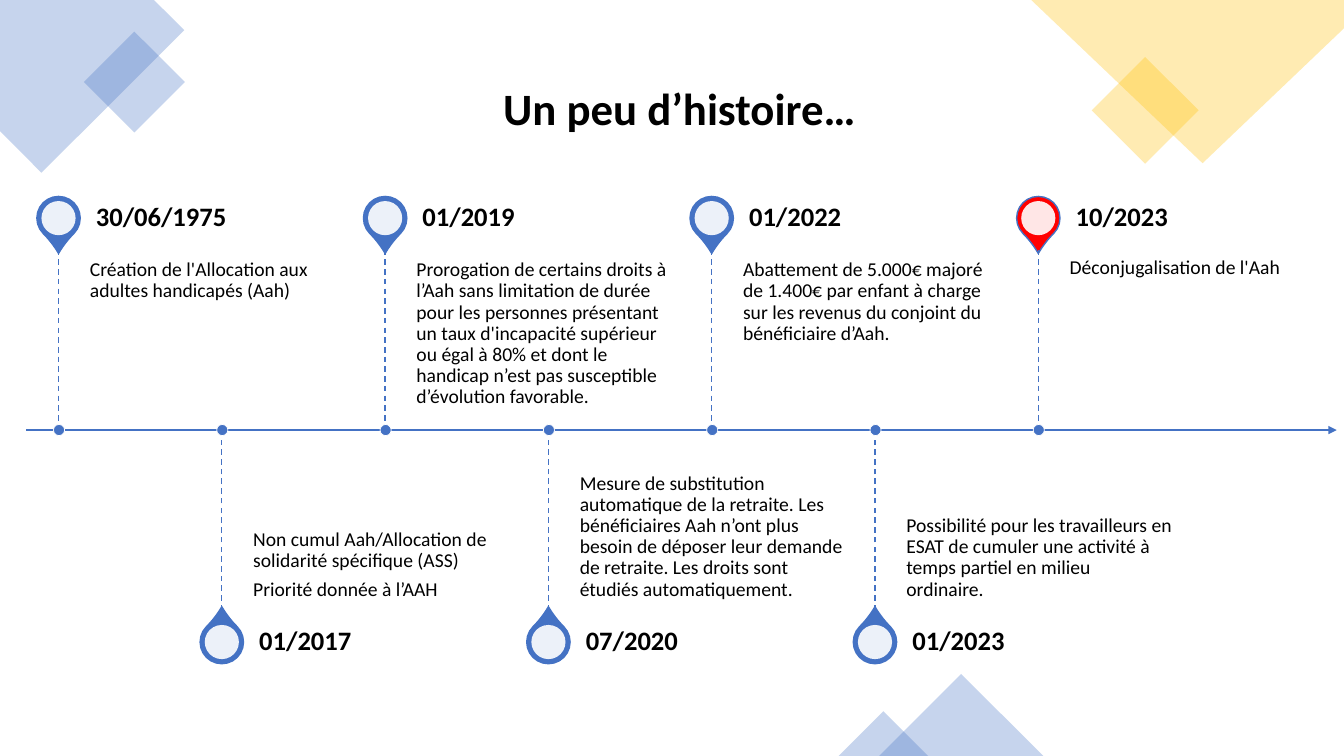
from lxml import etree
from pptx import Presentation
from pptx.dml.color import RGBColor
from pptx.enum.dml import MSO_LINE
from pptx.enum.shapes import MSO_CONNECTOR, MSO_SHAPE as SHAPE
from pptx.enum.text import MSO_ANCHOR as ANCHOR, PP_ALIGN
from pptx.oxml.ns import qn
from pptx.util import Pt

FONT = "Calibri"
BLUE, GOLD, RED, WHITE, BLACK = "4472C4", "FFC000", "FF0000", "FFFFFF", "000000"

# Milestones alternate above and below the axis: date, paragraphs, pin colour
MILESTONES = [
    ("30/06/1975", ["Création de l'Allocation aux adultes handicapés (Aah)"], BLUE),
    ("01/2017", ["Non cumul Aah/Allocation de solidarité spécifique (ASS)",
                 "Priorité donnée à l’AAH"], BLUE),
    ("01/2019", ["Prorogation de certains droits à l’Aah sans limitation de durée "
                 "pour les personnes présentant un taux d'incapacité supérieur ou "
                 "égal à 80% et dont le handicap n’est pas susceptible "
                 "d’évolution favorable."], BLUE),
    ("07/2020", ["Mesure de substitution automatique de la retraite. Les "
                 "bénéficiaires Aah n’ont plus besoin de déposer leur demande de "
                 "retraite. Les droits sont étudiés automatiquement."], BLUE),
    ("01/2022", ["Abattement de 5.000€ majoré de 1.400€ par enfant à charge sur "
                 "les revenus du conjoint du bénéficiaire d’Aah."], BLUE),
    ("01/2023", ["Possibilité pour les travailleurs en ESAT de cumuler une activité "
                 "à temps partiel en milieu ordinaire."], BLUE),
    ("10/2023", ["Déconjugalisation de l'Aah"], RED),
]


def rgb(color):
    return RGBColor.from_string(color)


def paint(sp, color, alpha=100, line=None, weight=1):
    """Fill a shape, with an opacity in percent and an optional outline."""
    sp.shadow.inherit = False
    sp.fill.solid()
    sp.fill.fore_color.rgb = rgb(color)
    if alpha < 100:
        clr = sp.fill._xPr.find(qn("a:solidFill"))[0]
        etree.SubElement(clr, qn("a:alpha"), val=str(alpha * 1000))
    if line:
        sp.line.color.rgb = rgb(line)
        sp.line.width = Pt(weight)
    else:
        sp.line.fill.background()


def add_shape(slide, kind, left, top, width, height, color, **style):
    sp = slide.shapes.add_shape(kind, Pt(left), Pt(top), Pt(width), Pt(height))
    paint(sp, color, **style)
    return sp


def add_centred(slide, kind, x, y, size, color, **style):
    return add_shape(slide, kind, x - size / 2, y - size / 2, size, size, color, **style)


def add_polygon(slide, points, color):
    points = [(Pt(x), Pt(y)) for x, y in points]
    builder = slide.shapes.build_freeform(*points[0], scale=1.0)
    builder.add_line_segments(points[1:], close=True)
    paint(builder.convert_to_shape(), color, alpha=30)


def add_line(slide, x1, y1, x2, y2, weight):
    cx = slide.shapes.add_connector(MSO_CONNECTOR.STRAIGHT, Pt(x1), Pt(y1), Pt(x2), Pt(y2))
    cx.line.color.rgb = rgb(BLUE)
    cx.line.width = Pt(weight)
    etree.SubElement(cx._element.spPr, qn("a:effectLst"))
    return cx


def format_text(tf, size, bold=False, align=PP_ALIGN.LEFT, after=0):
    for p in tf.paragraphs:
        p.alignment, p.line_spacing, p.space_after = align, 0.9, Pt(after)
        for r in p.runs:
            r.font.name, r.font.size, r.font.bold = FONT, Pt(size), bold
            r.font.color.rgb = rgb(BLACK)


def add_text(slide, left, top, width, height, text, size, insets, anchor, bold=False):
    box = slide.shapes.add_textbox(Pt(left), Pt(top), Pt(width), Pt(height))
    tf = box.text_frame
    tf.word_wrap = True
    tf.vertical_anchor = anchor
    (tf.margin_left, tf.margin_top,
     tf.margin_right, tf.margin_bottom) = [Pt(i) for i in insets]
    tf.text = text
    format_text(tf, size, bold, after=size * 0.35)


def add_corners(slide, width, height):
    """Translucent diamonds cut off by the slide edges."""
    # Top left
    add_polygon(slide, [(0, 0), (110, 0), (131.6, 21.6), (29.6, 123.4), (0, 93.6)], BLUE)
    add_centred(slide, SHAPE.RECTANGLE, 96, 58.6, 51, BLUE, alpha=30).rotation = 315
    # Top right
    add_centred(slide, SHAPE.RECTANGLE, width - 142, 78.8, 54, GOLD, alpha=30).rotation = 315
    add_polygon(slide, [(width, 0), (width - 223.4, 0), (width - 101, 116.6),
                        (width, 20.2)], GOLD)
    # Bottom
    for left, base in ((628, 117.2), (599, 64)):
        add_shape(slide, SHAPE.ISOSCELES_TRIANGLE, left, height - base / 2,
                  base, base / 2, BLUE, alpha=30)


def add_title(slide, left, top, width, height):
    sp = slide.shapes.title
    sp.left, sp.top, sp.width, sp.height = Pt(left), Pt(top), Pt(width), Pt(height)
    tf = sp.text_frame
    tf.text = "Un peu d’histoire…"
    tf.vertical_anchor = ANCHOR.MIDDLE
    format_text(tf, 32, bold=True, align=PP_ALIGN.CENTER)


def add_milestone(slide, x, axis_y, above, date, paragraphs, color):
    side = -1 if above else 1
    body_h, date_h, text_w = 128.8, 45.2, 190
    pin_y = axis_y + side * (body_h + date_h / 2)
    # Pin
    pin = add_centred(slide, SHAPE.TEAR, x, pin_y, 31, color, line=BLUE)
    pin.adjustments[0] = 1.15
    pin.rotation = 135 if above else 315
    add_centred(slide, SHAPE.OVAL, x, pin_y, 24.4, WHITE, alpha=90)
    # Description and date
    text_x = x + 22.4
    add_text(slide, text_x, axis_y - body_h if above else axis_y, text_w, body_h,
             "\n".join(paragraphs), 14,
             (0, 7.2, 7.2, 10.8) if above else (0, 10.8, 0, 7.2),
             ANCHOR.TOP if above else ANCHOR.BOTTOM)
    add_text(slide, text_x, pin_y - date_h / 2, text_w, date_h, date, 19,
             (4.3, 0, 9.4, 0), ANCHOR.MIDDLE, bold=True)
    # Stem and dot on the axis
    stem = add_line(slide, x, axis_y + side * body_h, x, axis_y, 1)
    stem.line.dash_style = MSO_LINE.DASH
    add_centred(slide, SHAPE.OVAL, x + 0.4, axis_y, 8, BLUE, line=WHITE, weight=0.5)


def add_timeline(slide, left, axis_y, width):
    axis = add_line(slide, left, axis_y, left + width, axis_y, 1.5)
    etree.SubElement(axis.line._get_or_add_ln(), qn("a:tailEnd"), type="triangle")
    first, step = left + 23, 116.64
    for i, milestone in enumerate(MILESTONES):
        add_milestone(slide, first + i * step, axis_y, i % 2 == 0, *milestone)


def main():
    prs = Presentation()
    prs.slide_width, prs.slide_height = Pt(960), Pt(540)
    slide = prs.slides.add_slide(prs.slide_layouts[5])
    add_corners(slide, 960, 540)
    add_title(slide, 44, 50.4, 882.8, 58.4)
    add_timeline(slide, 18.8, 307.2, 936)
    prs.save("out.pptx")


if __name__ == "__main__":
    main()
